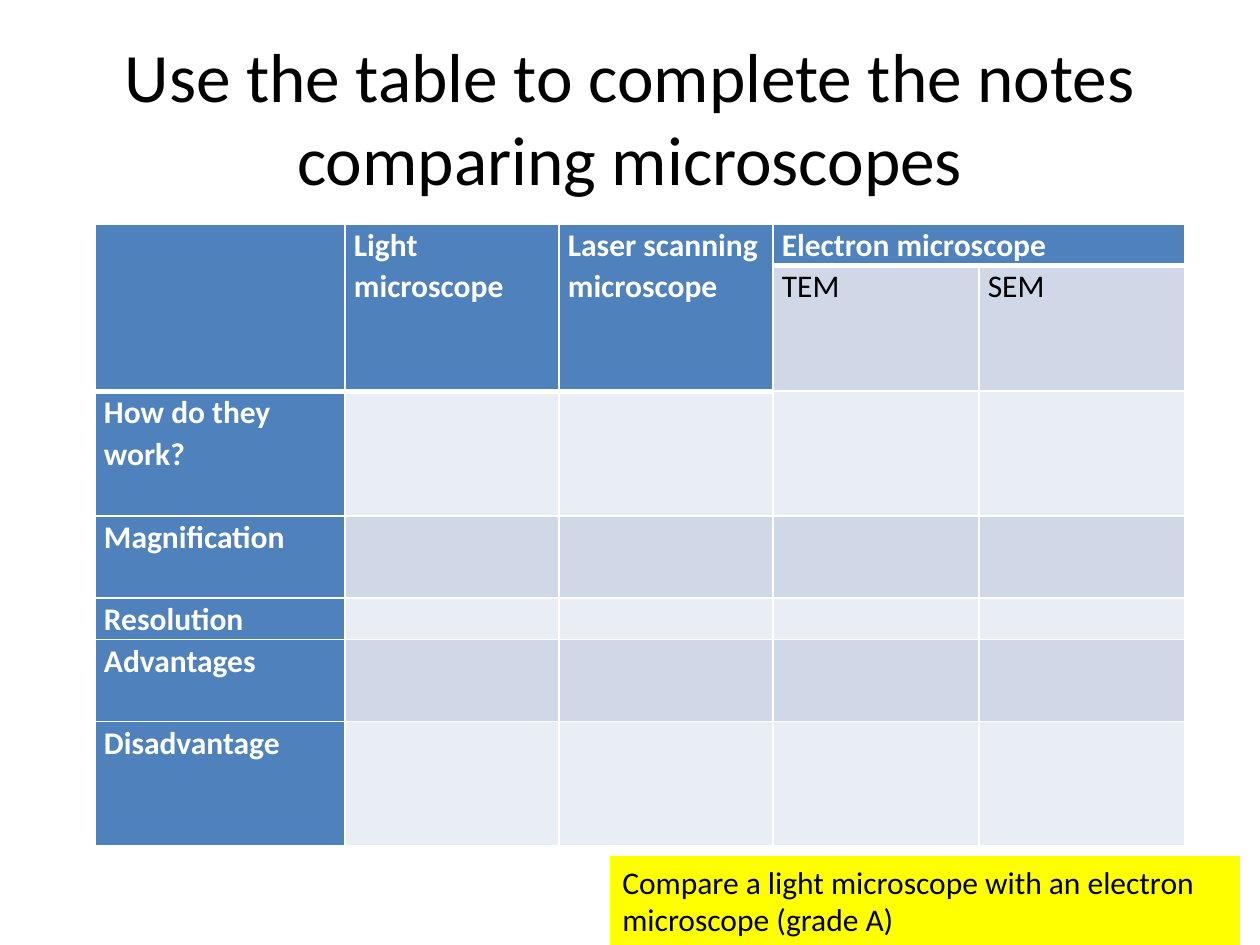
from lxml import etree
from pptx import Presentation
from pptx.dml.color import RGBColor
from pptx.enum.shapes import MSO_SHAPE
from pptx.enum.text import MSO_ANCHOR, MSO_AUTO_SIZE, PP_ALIGN
from pptx.oxml.ns import qn
from pptx.util import Pt

RECT = MSO_SHAPE.RECTANGLE
MIDDLE = MSO_ANCHOR.MIDDLE
NO_FIT = MSO_AUTO_SIZE.NONE
LEFT, CENTER = PP_ALIGN.LEFT, PP_ALIGN.CENTER

BLUE, DARK, PALE = "4F81BD", "D0D8E8", "E9EDF4"
WHITE, BLACK, YELLOW = "FFFFFF", "000000", "FFFF00"

COLS = [250, 214, 214, 206, 206]
ROWS = [41, 126, 125, 82, 41, 82, 124]
HEADS = ["", "Light microscope", "Laser scanning microscope", "Electron microscope"]
KINDS = {3: "TEM", 4: "SEM"}
TOPICS = ["How do they work?", "Magnification", "Resolution",
          "Advantages", "Disadvantage"]
SPLIT = 3  # first column of the electron microscope


def px(n):
    return round(n * 914400 / 126)


def color(code):
    return RGBColor.from_string(code)


def paint(item, code):
    item.fill.solid()
    item.fill.fore_color.rgb = color(code)


def write(frame, text, size=18, ink=BLACK, bold=False, align=LEFT, space=None):
    frame.word_wrap = True
    para = frame.paragraphs[0]
    para.alignment = align
    para.line_spacing = space
    run = para.add_run()
    run.text = text
    run.font.name = "Calibri"
    run.font.size = Pt(size)
    run.font.bold = bold
    run.font.color.rgb = color(ink)


def edge(cell, **widths):
    """Draw white cell borders; widths in points, in the order L, R, T, B."""
    props = cell._tc.get_or_add_tcPr()
    for spot, (side, width) in enumerate(widths.items()):
        line = etree.Element(qn(f"a:ln{side}"), w=str(Pt(width)))
        fill = etree.SubElement(line, qn("a:solidFill"))
        etree.SubElement(fill, qn("a:srgbClr"), val=WHITE)
        props.insert(spot, line)


def label(row, col):
    if row == 0:
        return HEADS[col] if col < len(HEADS) else ""
    if row == 1:
        return KINDS.get(col, "")
    return TOPICS[row - 2] if col == 0 else ""


def style(cell, row, col):
    last = 0 if col >= SPLIT else 1  # last header row of this column
    head = row <= last
    strong = head or col == 0
    paint(cell, BLUE if strong else DARK if row % 2 else PALE)
    cell.margin_left = cell.margin_right = px(9)
    cell.margin_top = cell.margin_bottom = 0
    edge(cell, L=1, R=1, T=3 if row == last + 1 else 1, B=3 if head else 1)
    text = label(row, col)
    if text:
        write(cell.text_frame, text, ink=WHITE if strong else BLACK,
              bold=strong, space=1.07)


def add_grid(slide):
    frame = slide.shapes.add_table(len(ROWS), len(COLS), px(95), px(224),
                                   px(sum(COLS)), px(sum(ROWS)))
    table = frame.table
    for col, width in zip(table.columns, COLS):
        col.width = px(width)
    for row, height in zip(table.rows, ROWS):
        row.height = px(height)
    for row in range(len(ROWS)):
        for col in range(len(COLS)):
            style(table.cell(row, col), row, col)
    for col in range(SPLIT):
        table.cell(0, col).merge(table.cell(1, col))
    table.cell(0, SPLIT).merge(table.cell(0, SPLIT + 1))


def add_title(slide, text):
    title = slide.shapes.title
    title.left, title.top = px(63), px(38)
    title.width, title.height = px(1134), px(157)
    frame = title.text_frame
    frame.auto_size = NO_FIT
    frame.vertical_anchor = MIDDLE
    write(frame, text, size=39.6, align=CENTER)


def add_task(slide, text):
    box = slide.shapes.add_shape(RECT, px(610), px(856), px(630), px(89))
    box.shadow.inherit = False
    paint(box, YELLOW)
    box.line.fill.background()
    box.text_frame.vertical_anchor = MIDDLE
    write(box.text_frame, text)


def main():
    deck = Presentation()
    deck.slide_width, deck.slide_height = px(1260), px(945)
    slide = deck.slides.add_slide(deck.slide_layouts[5])
    add_title(slide, "Use the table to complete the notes comparing microscopes")
    add_grid(slide)
    add_task(slide, "Compare a light microscope with an electron microscope (grade A)")
    deck.save("out.pptx")


if __name__ == "__main__":
    main()
